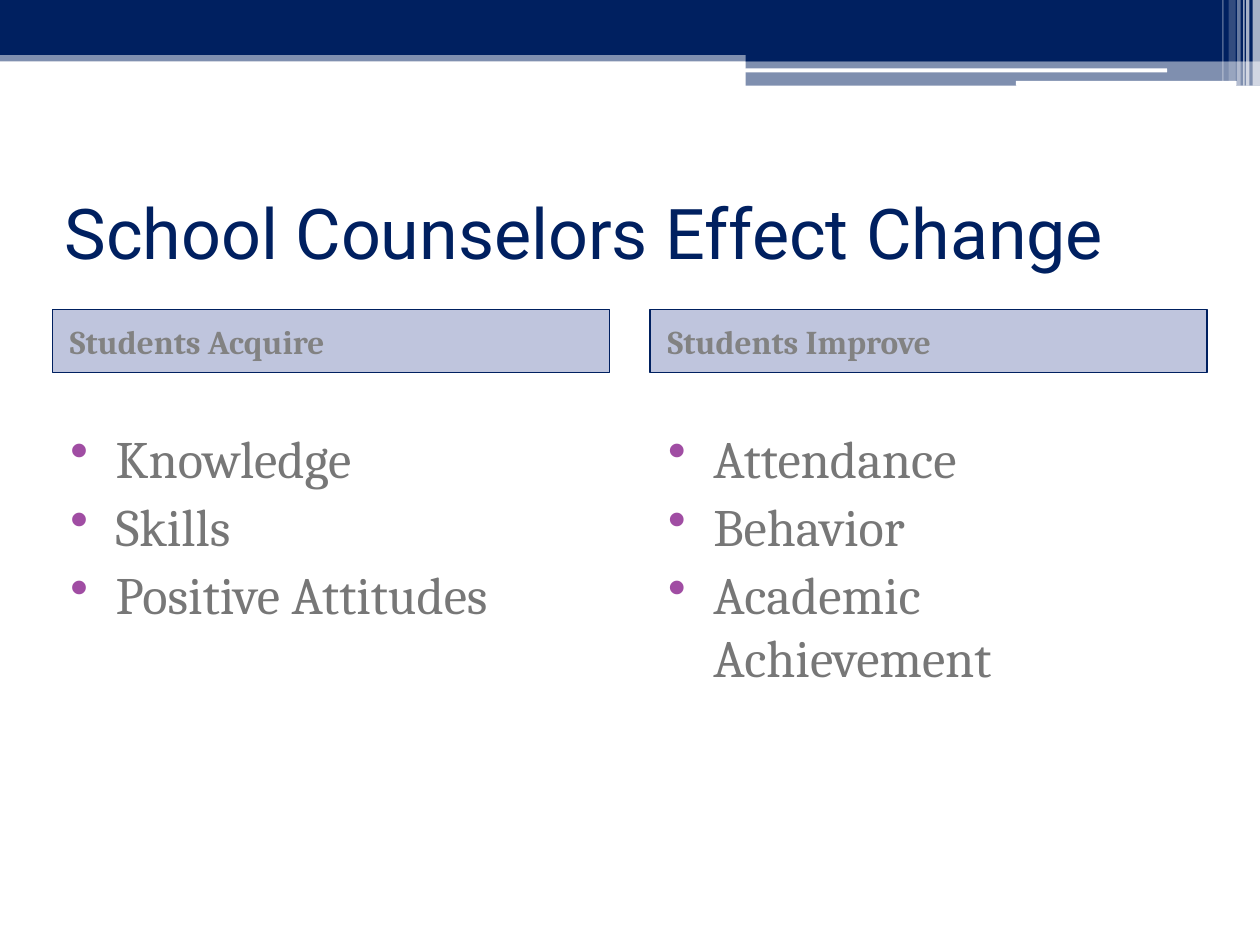
from lxml.etree import SubElement
from pptx import Presentation
from pptx.dml.color import RGBColor
from pptx.enum.shapes import MSO_SHAPE as Shape
from pptx.enum.text import MSO_ANCHOR as Anchor, PP_ALIGN as Align
from pptx.oxml.ns import qn
from pptx.util import Cm, Pt

COLORS = {"navy": "002060", "white": "FFFFFF", "indigo": "001878",
          "heading": "828282", "body": "777777", "bullet": "A04DA3"}

TITLE = "School Counselors Effect Change"
COLUMNS = [
    ("Students Acquire", ["Knowledge", "Skills", "Positive Attitudes"]),
    ("Students Improve", ["Attendance", "Behavior", "Academic Achievement"]),
]

BANDS = [
    (Shape.RECTANGLE, 0, 1.02, 25.4, 0.22, "navy", 50),
    (Shape.RECTANGLE, 0, 0, 25.4, 0.87, "navy", 100),
    (Shape.RECTANGLE, 0, 0.86, 25.4, 0.25, "navy", 100),
    (Shape.RECTANGLE, 15.03, 0.99, 10.37, 0.25, "navy", 100),
    (Shape.RECTANGLE, 15.03, 1.23, 10.37, 0.5, "navy", 50),
    (Shape.ROUNDED_RECTANGLE, 15.02, 1.38, 8.51, 0.08, "white", 100),
    (Shape.ROUNDED_RECTANGLE, 20.48, 1.63, 4.45, 0.1, "white", 100),
]
STRIPES = [(25.25, 0.15, 1.73, 65), (25.12, 0.07, 1.73, 65),
           (25.06, 0.03, 1.73, 60), (24.94, 0.07, 1.73, 40),
           (24.77, 0.14, 1.63, 20), (24.64, 0.03, 1.63, 30)]

MARGIN, COLUMN_WIDTH, COLUMN_STEP = 1.06, 11.23, 12.05
HEADING_TOP, HEADING_HEIGHT = 6.24, 1.27
LIST_TOP, LIST_HEIGHT = 8.46, 9.86


def color(name):
    return RGBColor.from_string(COLORS[name])


def add_block(slide, kind, left, top, width, height, fill, opacity=100, line=None):
    shape = slide.shapes.add_shape(kind, Cm(left), Cm(top), Cm(width), Cm(height))
    shape.shadow.inherit = False
    shape.fill.solid()
    shape.fill.fore_color.rgb = color(fill)
    if opacity < 100:
        fill_color = shape.fill._xPr.find(qn("a:solidFill"))[0]
        SubElement(fill_color, qn("a:alpha"), val=str(opacity * 1000))
    if line:
        shape.line.color.rgb = color(line)
        shape.line.width = Pt(1)
    else:
        shape.line.fill.background()
    return shape


def add_textbox(slide, left, top, width, height):
    return slide.shapes.add_textbox(Cm(left), Cm(top), Cm(width), Cm(height))


def write_text(shape, lines, size, font, fill, bold=False, anchor=Anchor.MIDDLE,
               indent=(0, 0), bullet=None, space=0):
    frame = shape.text_frame
    frame.word_wrap = True
    frame.vertical_anchor = anchor
    for index, line in enumerate(lines):
        paragraph = frame.paragraphs[0] if index == 0 else frame.add_paragraph()
        paragraph.alignment = Align.LEFT
        properties = paragraph._p.get_or_add_pPr()
        properties.set("marL", str(Cm(indent[0])))
        properties.set("indent", str(Cm(indent[1])))
        if index and space:
            paragraph.space_before = Pt(space)
        if bullet:
            bullet_color = SubElement(properties, qn("a:buClr"))
            SubElement(bullet_color, qn("a:srgbClr"), val=COLORS[bullet])
            SubElement(properties, qn("a:buChar"), char="•")
        run = paragraph.add_run()
        run.text = line
        run.font.size = Pt(size)
        run.font.name = font
        run.font.bold = bold
        run.font.color.rgb = color(fill)


def main():
    presentation = Presentation()
    presentation.slide_width, presentation.slide_height = Cm(25.4), Cm(19.05)
    slide = presentation.slides.add_slide(presentation.slide_layouts[6])

    for band in BANDS:
        add_block(slide, *band)
    for left, width, height, opacity in STRIPES:
        add_block(slide, Shape.RECTANGLE, left, 0, width, height, "white", opacity)

    title = add_textbox(slide, MARGIN, 3.18, 23.29, 2.97)
    write_text(title, [TITLE], 40, "Roboto", "navy")

    for index, (heading, items) in enumerate(COLUMNS):
        left = MARGIN + index * COLUMN_STEP
        header = add_block(slide, Shape.RECTANGLE, left, HEADING_TOP, COLUMN_WIDTH,
                           HEADING_HEIGHT, "indigo", 25, "navy")
        write_text(header, [heading], 19, "Cambria", "heading", bold=True,
                   indent=(0.13, -0.03))
        body = add_textbox(slide, left, LIST_TOP, COLUMN_WIDTH, LIST_HEIGHT)
        write_text(body, items, 30, "Cambria", "body", anchor=Anchor.TOP,
                   indent=(1.02, -0.91), bullet="bullet", space=3)

    presentation.save("out.pptx")


if __name__ == "__main__":
    main()
